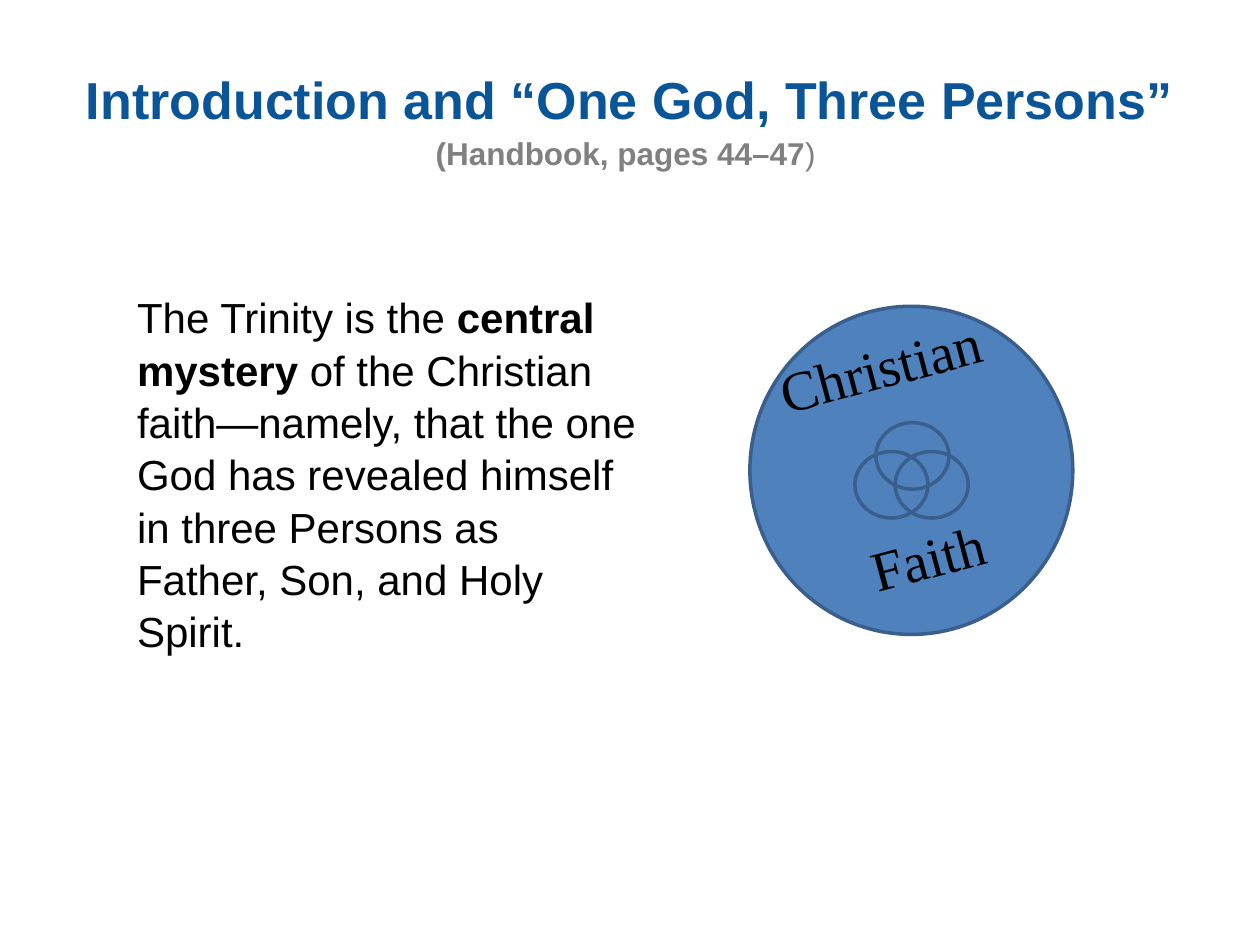
from pptx import Presentation
from pptx.dml.color import RGBColor
from pptx.enum.shapes import MSO_SHAPE
from pptx.enum.text import MSO_ANCHOR, PP_ALIGN
from pptx.util import Pt

OVAL = MSO_SHAPE.OVAL
MIDDLE = MSO_ANCHOR.MIDDLE
CENTER = PP_ALIGN.CENTER

NAVY = RGBColor(0x0A, 0x55, 0x98)
GRAY = RGBColor(0x80, 0x80, 0x80)
BLACK = RGBColor(0, 0, 0)
BLUE = RGBColor(0x4F, 0x81, 0xBD)
EDGE = RGBColor(0x3A, 0x5F, 0x8C)

SANS = "Arial"
SERIF = "Times New Roman"


def add_box(slide, left, top, width, height):
    box = slide.shapes.add_textbox(Pt(left), Pt(top), Pt(width), Pt(height))
    box.text_frame.word_wrap = True
    return box


def add_run(para, text, size, color, bold=False, face=SANS):
    run = para.add_run()
    run.text = text
    font = run.font
    font.name, font.size, font.bold = face, Pt(size), bold
    font.color.rgb = color


def add_oval(group, left, top, width, height, fill=None):
    oval = group.shapes.add_shape(OVAL, Pt(left), Pt(top), Pt(width), Pt(height))
    oval.shadow.inherit = False
    if fill is None:
        oval.fill.background()
    else:
        oval.fill.solid()
        oval.fill.fore_color.rgb = fill
    oval.line.color.rgb = EDGE
    oval.line.width = Pt(2)


def add_title(slide, left, top, width, height):
    frame = add_box(slide, left, top, width, height).text_frame
    frame.vertical_anchor = MIDDLE
    para = frame.paragraphs[0]
    para.alignment = CENTER
    para.line_spacing = 1.1
    add_run(para, "Introduction and “One God, Three Persons”", 29.7, NAVY, True)
    para.add_line_break()
    add_run(para, "(Handbook, pages 44–47", 18, GRAY, True)
    add_run(para, ") ", 18, GRAY)


def add_body(slide, left, top, width, height):
    para = add_box(slide, left, top, width, height).text_frame.paragraphs[0]
    para.line_spacing = 1.04
    add_run(para, "The Trinity is the ", 24, BLACK)
    add_run(para, "central mystery ", 24, BLACK, True)
    add_run(para, "of the Christian faith—namely, that the one God has revealed "
            "himself in three Persons as Father, Son, and Holy Spirit.", 24, BLACK)


def add_emblem(slide, left, top, width, height):
    # Disc
    group = slide.shapes.add_group_shape()
    add_oval(group, left, top, width, height, BLUE)

    # Tilted words, one above and one below the rings
    box = add_box(group, left + 23.5, top + 0.5, 200, 171)
    box.rotation = -15
    frame = box.text_frame
    upper, lower = frame.paragraphs[0], frame.add_paragraph()
    add_run(upper, "Christian", 32, BLACK, face=SERIF)
    lower.space_before = Pt(73.5)
    props = lower._p.get_or_add_pPr()
    props.set("marL", str(Pt(24)))
    props.set("indent", "0")
    add_run(lower, "Faith", 32, BLACK, face=SERIF)

    # Three linked rings
    rings = group.shapes.add_group_shape()
    for dx, dy in ((83, 83), (60, 83), (72, 66.5)):
        add_oval(rings, left + dx, top + dy, 41.75, 38)


def main():
    deck = Presentation()
    deck.slide_width, deck.slide_height = Pt(720), Pt(540)
    slide = deck.slides.add_slide(deck.slide_layouts[6])
    add_title(slide, 36, 21.5, 648, 90)
    add_body(slide, 71.25, 162, 299.5, 243.5)
    add_emblem(slide, 428.5, 175, 184.5, 187.5)
    deck.save("out.pptx")


if __name__ == "__main__":
    main()
